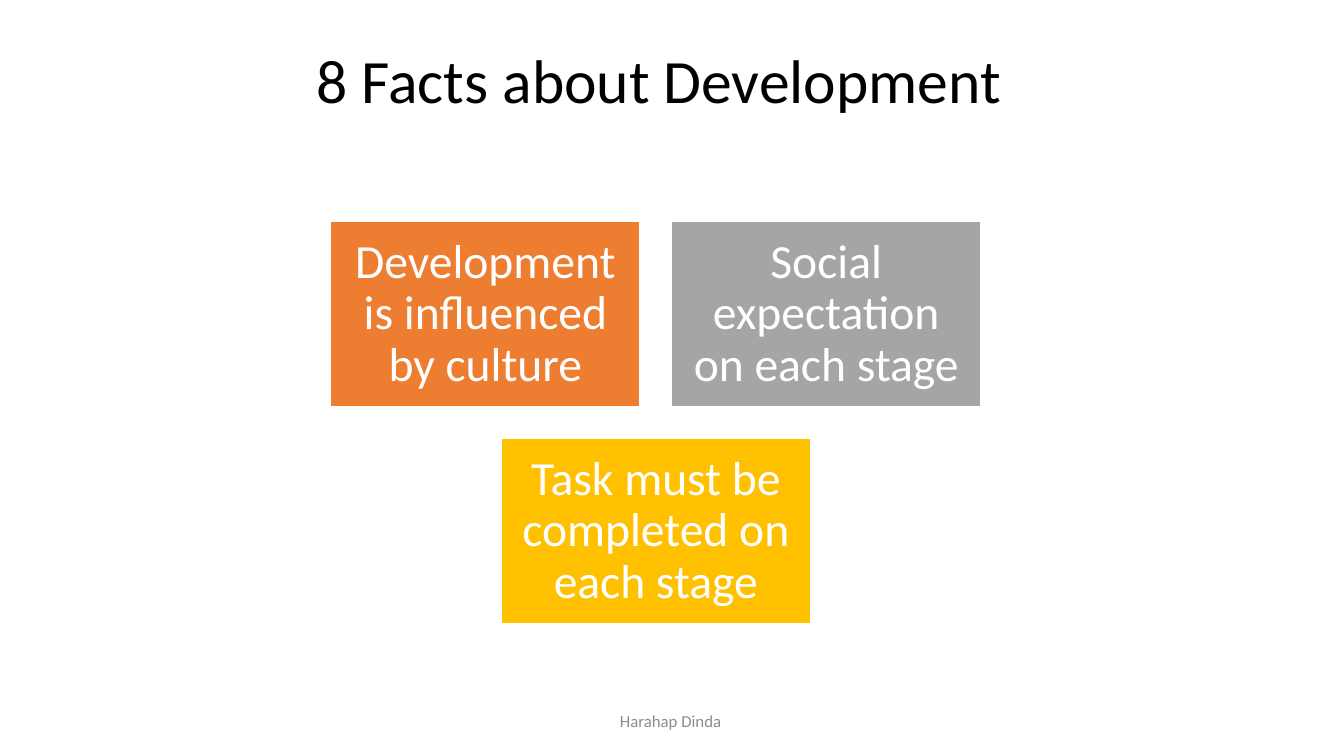
import pptx
import pptx.util
import pptx.dml.color
import pptx.enum.shapes
import pptx.enum.text

Inches = pptx.util.Inches
PP_ALIGN = pptx.enum.text.PP_ALIGN
MSO_ANCHOR = pptx.enum.text.MSO_ANCHOR

COLORS = {
    "white": "FFFFFF",
    "title": "000000",
    "footer": "8C8C8C",
    "culture": "ED7D31",
    "expectation": "A5A5A5",
    "task": "FFC000",
}

FACT_ROWS = [
    [
        ("Development is influenced by culture", "culture"),
        ("Social expectation on each stage", "expectation"),
    ],
    [("Task must be completed on each stage", "task")],
]


def rgb(name):
    """Return the named colour."""
    return pptx.dml.color.RGBColor.from_string(COLORS[name])


def write(frame, text, size, color, align, anchor, spacing=1.0):
    """Put one formatted paragraph into a text frame."""
    frame.text = text
    frame.word_wrap = True
    frame.auto_size = pptx.enum.text.MSO_AUTO_SIZE.NONE
    frame.vertical_anchor = anchor
    paragraph = frame.paragraphs[0]
    paragraph.alignment = align
    paragraph.line_spacing = spacing
    font = paragraph.runs[0].font
    font.name = "Calibri"
    font.size = pptx.util.Pt(size)
    font.color.rgb = rgb(color)


def add_title(slide, left, top, width, height):
    """Place and format the slide title."""
    title = slide.shapes.title
    title.left, title.top = Inches(left), Inches(top)
    title.width, title.height = Inches(width), Inches(height)
    write(title.text_frame, "8 Facts about Development", 44, "title",
          PP_ALIGN.LEFT, MSO_ANCHOR.TOP, 0.9)


def add_fact(slide, text, color, left, top, width, height):
    """Draw one coloured fact box."""
    fact = slide.shapes.add_shape(
        pptx.enum.shapes.MSO_SHAPE.RECTANGLE,
        Inches(left), Inches(top), Inches(width), Inches(height))
    fact.shadow.inherit = False
    fact.fill.solid()
    fact.fill.fore_color.rgb = rgb(color)
    fact.line.color.rgb = rgb("white")
    fact.line.width = pptx.util.Pt(1)
    frame = fact.text_frame
    frame.margin_left = frame.margin_right = Inches(0.14)
    frame.margin_top = frame.margin_bottom = Inches(0.14)
    write(frame, text, 34, "white", PP_ALIGN.CENTER, MSO_ANCHOR.MIDDLE, 0.9)


def add_facts(slide, left, top, width, height):
    """Lay out the rows of facts, each row centred in the box."""
    gap = 0.31
    fact_width = (width - gap) / 2
    fact_height = (height - gap) / len(FACT_ROWS)
    for row, facts in enumerate(FACT_ROWS):
        row_width = len(facts) * (fact_width + gap) - gap
        row_left = left + (width - row_width) / 2
        for column, (text, color) in enumerate(facts):
            add_fact(slide, text, color,
                     row_left + column * (fact_width + gap),
                     top + row * (fact_height + gap),
                     fact_width, fact_height)


def add_footer(slide, left, top, width, height):
    """Write the author's name at the foot of the slide."""
    footer = slide.shapes.add_textbox(
        Inches(left), Inches(top), Inches(width), Inches(height))
    write(footer.text_frame, "Harahap Dinda ", 12, "footer",
          PP_ALIGN.CENTER, MSO_ANCHOR.MIDDLE)


def main():
    """Build and save the slide."""
    presentation = pptx.Presentation()
    presentation.slide_width = Inches(13.33)
    presentation.slide_height = Inches(7.5)
    slide = presentation.slides.add_slide(presentation.slide_layouts[5])
    slide.background.fill.solid()
    slide.background.fill.fore_color.rgb = rgb("white")
    add_facts(slide, 3.28, 2.2, 6.45, 3.99)
    add_title(slide, 3.04, 0.45, 8.16, 1.11)
    add_footer(slide, 4.42, 6.95, 4.5, 0.4)
    presentation.save("out.pptx")


if __name__ == "__main__":
    main()
